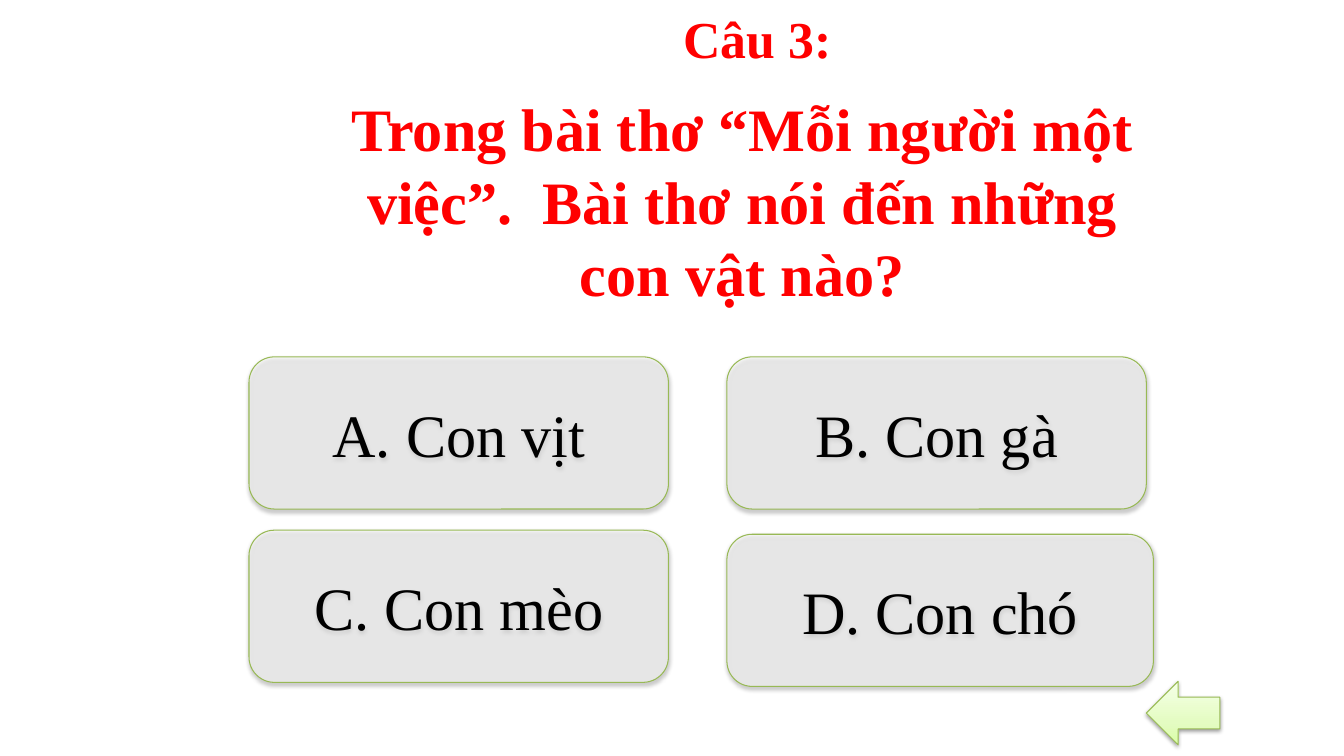
from dataclasses import dataclass

from lxml.etree import SubElement
from pptx import Presentation
from pptx.dml.color import RGBColor
from pptx.enum.shapes import MSO_SHAPE
from pptx.enum.text import MSO_ANCHOR, MSO_AUTO_SIZE, PP_ALIGN
from pptx.oxml.ns import qn
from pptx.util import Inches, Pt


@dataclass(frozen=True)
class Theme:
    font: str = "Times New Roman"
    heading: str = "FF0000"
    ink: str = "000000"
    card: str = "FFFFFF"
    edge: str = "98B955"
    arrow: tuple = ((0, "DAFDA7"), (35, "E4FCC2"), (100, "F5FFE7"))
    number_size: int = 37
    text_size: int = 43


THEME = Theme()
SLIDE_W, SLIDE_H = 13.33, 7.5
ANSWERS = ("A. Con vịt", "B. Con gà", "C. Con mèo", "D. Con chó")


def inches(box):
    return [Inches(v) for v in box]


def write(sp, text, size=THEME.text_size, color=THEME.ink, bold=False,
          anchor=MSO_ANCHOR.TOP):
    tf = sp.text_frame
    tf.word_wrap = True
    tf.auto_size = MSO_AUTO_SIZE.NONE
    tf.vertical_anchor = anchor
    tf.margin_left = tf.margin_right = Inches(0.13)
    tf.margin_top = tf.margin_bottom = Inches(0.07)
    p = tf.paragraphs[0]
    p.alignment = PP_ALIGN.CENTER
    r = p.add_run()
    r.text = text
    r.font.name = THEME.font
    r.font.size = Pt(size)
    r.font.bold = bold
    r.font.color.rgb = RGBColor.from_string(color)


def add_color(parent, color, alpha=None):
    clr = SubElement(parent, qn("a:srgbClr"), val=color)
    if alpha is not None:
        SubElement(clr, qn("a:alpha"), val=str(alpha * 1000))


def add_raised_shape(slide, kind, box):
    """Add a preset shape with the thin green edge and soft drop shadow."""
    sp = slide.shapes.add_shape(kind, *inches(box))
    sp.line.color.rgb = RGBColor.from_string(THEME.edge)
    sp.line.width = Pt(0.75)
    sp.shadow.inherit = False
    effects = sp._element.spPr.find(qn("a:effectLst"))
    shadow = SubElement(effects, qn("a:outerShdw"), blurRad=str(Pt(3.1)),
                        dist=str(Pt(1.6)), dir="5400000", rotWithShape="0")
    add_color(shadow, THEME.ink, alpha=38)
    return sp


def add_back_arrow(slide, box):
    sp = add_raised_shape(slide, MSO_SHAPE.LEFT_ARROW, box)
    sp.fill.gradient()
    sp.fill.gradient_angle = 90
    stops = sp._element.spPr.find(".//" + qn("a:gsLst"))
    stops.clear()
    for pos, color in THEME.arrow:
        add_color(SubElement(stops, qn("a:gs"), pos=str(pos * 1000)), color)


def add_question(slide, box, number, question):
    """Put the number in the title and the question in a box below it."""
    x, y, w, h = box
    title = slide.shapes.title
    title.left, title.top, title.width, title.height = inches(
        (x + 3.22, y, 2.52, 0.76))
    write(title, number, size=THEME.number_size, color=THEME.heading, bold=True)
    body = slide.shapes.add_textbox(*inches((x, y + 0.84, w, h - 0.84)))
    write(body, question, color=THEME.heading, bold=True)


def add_answers(slide, box, answers, gap_x=0.58, gap_y=0.21):
    """Lay the answers out in two columns; the last card is slightly larger."""
    x, y, w, h = box
    card_w, card_h = (w - gap_x) / 2, (h - gap_y) / 2
    for i, answer in enumerate(answers):
        row, col = divmod(i, 2)
        last = i == len(answers) - 1
        card = (x + col * (card_w + gap_x),
                y + row * (card_h + gap_y) + (0.04 if last else 0),
                card_w + (0.07 if last else 0), card_h)
        sp = add_raised_shape(slide, MSO_SHAPE.ROUNDED_RECTANGLE, card)
        sp.fill.solid()
        sp.fill.fore_color.rgb = RGBColor.from_string(THEME.card)
        clr = sp._element.spPr.find(qn("a:solidFill")).find(qn("a:srgbClr"))
        SubElement(clr, qn("a:alpha"), val="50000")
        write(sp, answer, anchor=MSO_ANCHOR.MIDDLE)


def main():
    prs = Presentation()
    prs.slide_width, prs.slide_height = Inches(SLIDE_W), Inches(SLIDE_H)
    slide = prs.slides.add_slide(prs.slide_layouts[5])
    add_back_arrow(slide, (11.37, 6.76, 0.73, 0.63))
    add_question(slide, (3.03, 0, 8.66, 3.13), "Câu 3:",
                 "Trong bài thơ “Mỗi người một việc”.  "
                 "Bài thơ nói đến những con vật nào?")
    add_answers(slide, (2.47, 3.54, 8.9, 3.23), ANSWERS)
    prs.save("out.pptx")


if __name__ == "__main__":
    main()
